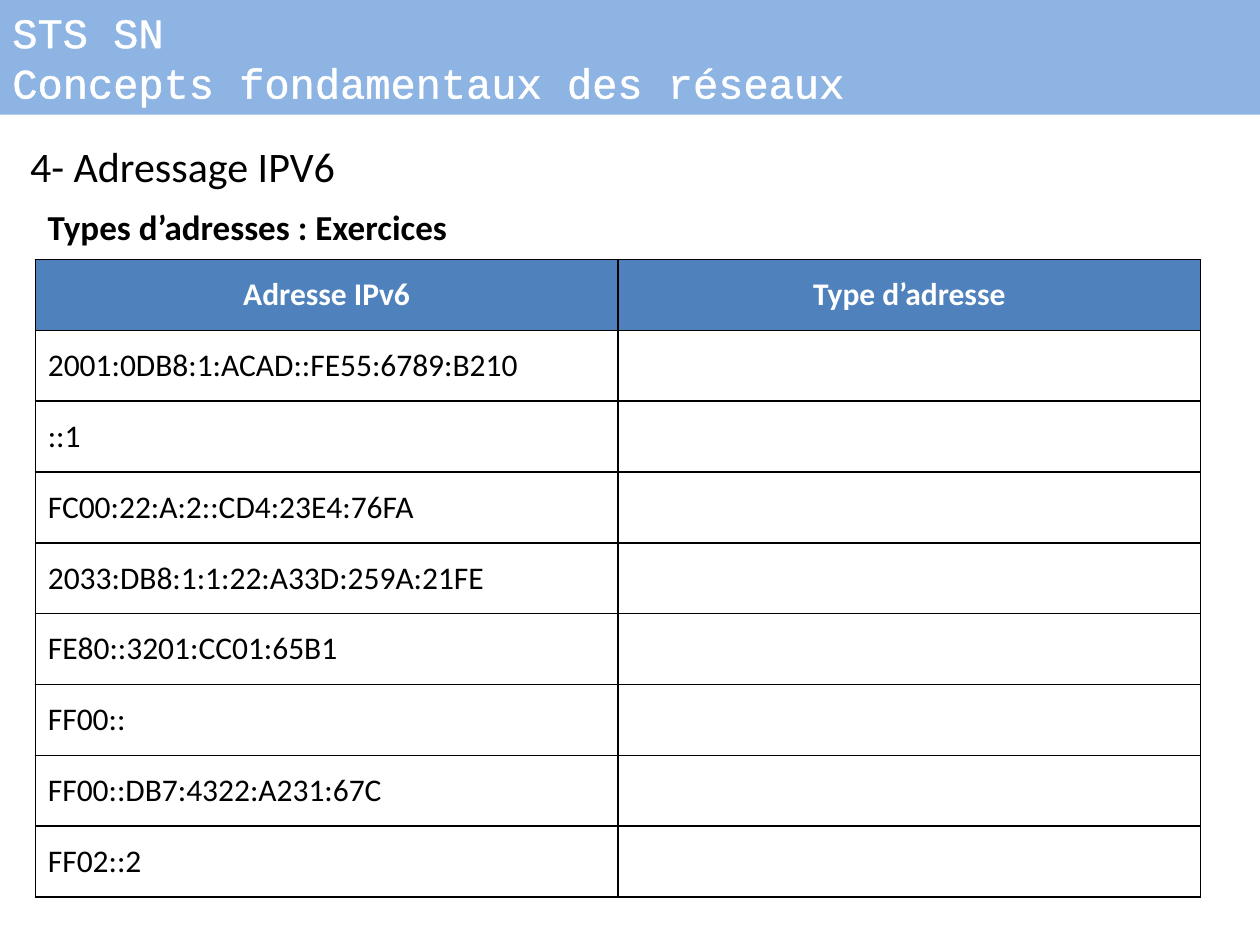
from lxml import etree
from pptx import Presentation
from pptx.dml.color import RGBColor
from pptx.enum.shapes import MSO_SHAPE
from pptx.enum.text import MSO_ANCHOR, PP_ALIGN
from pptx.oxml.ns import qn
from pptx.util import Inches, Pt

RECT = MSO_SHAPE.RECTANGLE
TOP, MIDDLE = MSO_ANCHOR.TOP, MSO_ANCHOR.MIDDLE
LEFT, CENTER = PP_ALIGN.LEFT, PP_ALIGN.CENTER

WIDTH, HEIGHT = 10, 7.5
COLORS = {
    "banner": "8EB4E3",
    "head": "4F81BD",
    "light": "FFFFFF",
    "dark": "000000",
}
HEADS = ["Adresse IPv6", "Type d’adresse"]
HOSTS = [
    "2001:0DB8:1:ACAD::FE55:6789:B210",
    "::1",
    "FC00:22:A:2::CD4:23E4:76FA",
    "2033:DB8:1:1:22:A33D:259A:21FE",
    "FE80::3201:CC01:65B1",
    "FF00::",
    "FF00::DB7:4322:A231:67C",
    "FF02::2",
]


def color(name):
    return RGBColor.from_string(COLORS[name])


def add_line(parent, tag, name, points):
    """Append a solid line element of the given tag."""
    line = etree.SubElement(parent, qn(tag), w=str(Pt(points)))
    fill = etree.SubElement(line, qn("a:solidFill"))
    etree.SubElement(fill, qn("a:srgbClr"), val=COLORS[name])
    return line


def style(frame, size, name, font="Calibri", bold=False, align=LEFT):
    for para in frame.paragraphs:
        para.alignment = align
        for run in para.runs:
            run.font.name = font
            run.font.size = Pt(size)
            run.font.bold = bold
            run.font.color.rgb = color(name)


def add_banner(slide, text):
    bar = slide.shapes.add_shape(RECT, 0, 0, Inches(WIDTH), Inches(0.91))
    bar.shadow.inherit = False
    bar.fill.solid()
    bar.fill.fore_color.rgb = color("banner")
    bar.line.fill.background()
    frame = bar.text_frame
    frame.text = text
    frame.vertical_anchor = TOP
    style(frame, 24, "light", font="Courier New")
    # Thin outline around the letters
    for para in frame.paragraphs:
        for run in para.runs:
            props = run.font._element if hasattr(run.font, "_element") else run._r.rPr
            props.insert(0, add_line(props, "a:ln", "light", 1.45))


def add_label(slide, box, text, size, bold=False, wrap=True):
    label = slide.shapes.add_textbox(*[Inches(n) for n in box])
    frame = label.text_frame
    frame.word_wrap = wrap
    frame.text = text
    style(frame, size, "dark", bold=bold)


def add_borders(cell):
    props = cell._tc.get_or_add_tcPr()
    for spot, side in enumerate(("a:lnL", "a:lnR", "a:lnT", "a:lnB")):
        props.insert(spot, add_line(props, side, "dark", 1))


def fill_cell(cell, text, head):
    cell.vertical_anchor = MIDDLE
    if head:
        cell.fill.solid()
        cell.fill.fore_color.rgb = color("head")
    else:
        cell.fill.background()
    cell.text_frame.text = text
    style(cell.text_frame, 18, "light" if head else "dark",
          bold=head, align=CENTER if head else LEFT)
    add_borders(cell)


def add_grid(slide, box, rows):
    frame = slide.shapes.add_table(
        len(rows), len(rows[0]), *[Inches(n) for n in box])
    for r, row in enumerate(rows):
        for c, text in enumerate(row):
            fill_cell(frame.table.cell(r, c), text, head=r == 0)


def main():
    deck = Presentation()
    deck.slide_width, deck.slide_height = Inches(WIDTH), Inches(HEIGHT)
    slide = deck.slides.add_slide(deck.slide_layouts[6])

    # Course banner
    add_banner(slide, "STS SN\nConcepts fondamentaux des réseaux")

    # Section titles
    add_label(slide, (0.14, 1.07, 2.64, 0.5), "4- Adressage IPV6", 24, wrap=False)
    add_label(slide, (0.28, 1.58, 9.37, 0.44), "Types d’adresses : Exercices",
              20, bold=True)

    # Exercise table, with the answers left to fill in
    rows = [HEADS] + [[host, ""] for host in HOSTS]
    add_grid(slide, (0.28, 2.06, 9.25, 5.06), rows)

    deck.save("out.pptx")


if __name__ == "__main__":
    main()
